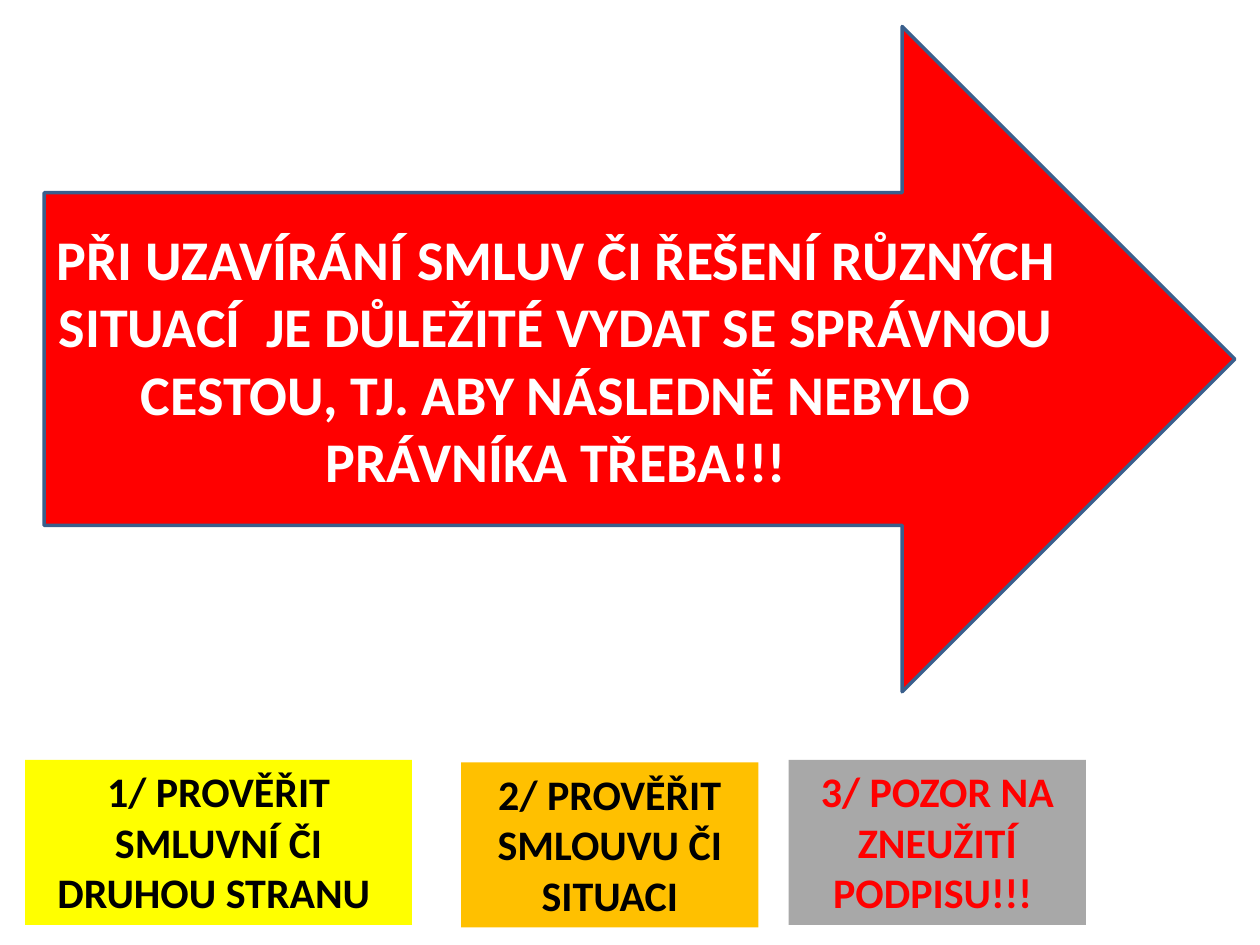
from lxml.etree import SubElement
from pptx import Presentation
from pptx.dml.color import RGBColor
from pptx.enum.shapes import MSO_SHAPE
from pptx.enum.text import MSO_ANCHOR, MSO_AUTO_SIZE, PP_ALIGN
from pptx.oxml.ns import qn
from pptx.util import Inches, Pt

MESSAGE = (
    "PŘI UZAVÍRÁNÍ SMLUV ČI ŘEŠENÍ RŮZNÝCH SITUACÍ  JE DŮLEŽITÉ VYDAT SE "
    "SPRÁVNOU CESTOU, TJ. ABY NÁSLEDNĚ NEBYLO PRÁVNÍKA TŘEBA!!!"
)
STEPS = [
    ("1/ PROVĚŘIT SMLUVNÍ ČI DRUHOU STRANU ", 0.2, 6.03, 3.07, "FFFF00", 100, "000000"),
    ("2/ PROVĚŘIT SMLOUVU ČI SITUACI", 3.66, 6.05, 2.36, "FFC000", 100, "000000"),
    ("3/ POZOR NA ZNEUŽITÍ PODPISU!!! ", 6.26, 6.03, 2.36, "000000", 34, "FF0000"),
]
STEP_HEIGHT = 1.31


def color(value):
    return RGBColor.from_string(value)


def paint(shape, value, opacity=100):
    shape.fill.solid()
    shape.fill.fore_color.rgb = color(value)
    if opacity < 100:
        fill_color = shape.fill._xPr.find(qn("a:solidFill"))[0]
        SubElement(fill_color, qn("a:alpha"), val=str(opacity * 1000))


def write(shape, text, size, value):
    shape.text_frame.word_wrap = True
    para = shape.text_frame.paragraphs[0]
    para.text = text
    para.alignment = PP_ALIGN.CENTER
    para.font.name = "Calibri"
    para.font.size = Pt(size)
    para.font.bold = True
    para.font.color.rgb = color(value)


def add_arrow(page):
    arrow = page.shapes.add_shape(
        MSO_SHAPE.RIGHT_ARROW, Inches(0.35), Inches(0.21), Inches(9.45), Inches(5.28)
    )
    arrow.shadow.inherit = False
    paint(arrow, "FF0000")
    arrow.line.color.rgb = color("3A5F8C")
    arrow.line.width = Pt(2)
    frame = arrow.text_frame
    frame.vertical_anchor = MSO_ANCHOR.MIDDLE
    frame.margin_left = frame.margin_right = Inches(0.08)
    write(arrow, MESSAGE, 32, "FFFFFF")


def add_step(page, text, left, top, width, fill, opacity, text_color):
    box = page.shapes.add_textbox(
        Inches(left), Inches(top), Inches(width), Inches(STEP_HEIGHT)
    )
    paint(box, fill, opacity)
    write(box, text, 24, text_color)
    box.text_frame.auto_size = MSO_AUTO_SIZE.SHAPE_TO_FIT_TEXT


def main():
    deck = Presentation()
    deck.slide_width, deck.slide_height = Inches(10), Inches(7.5)
    page = deck.slides.add_slide(deck.slide_layouts[6])
    add_arrow(page)
    for step in STEPS:
        add_step(page, *step)
    deck.save("out.pptx")


if __name__ == "__main__":
    main()
